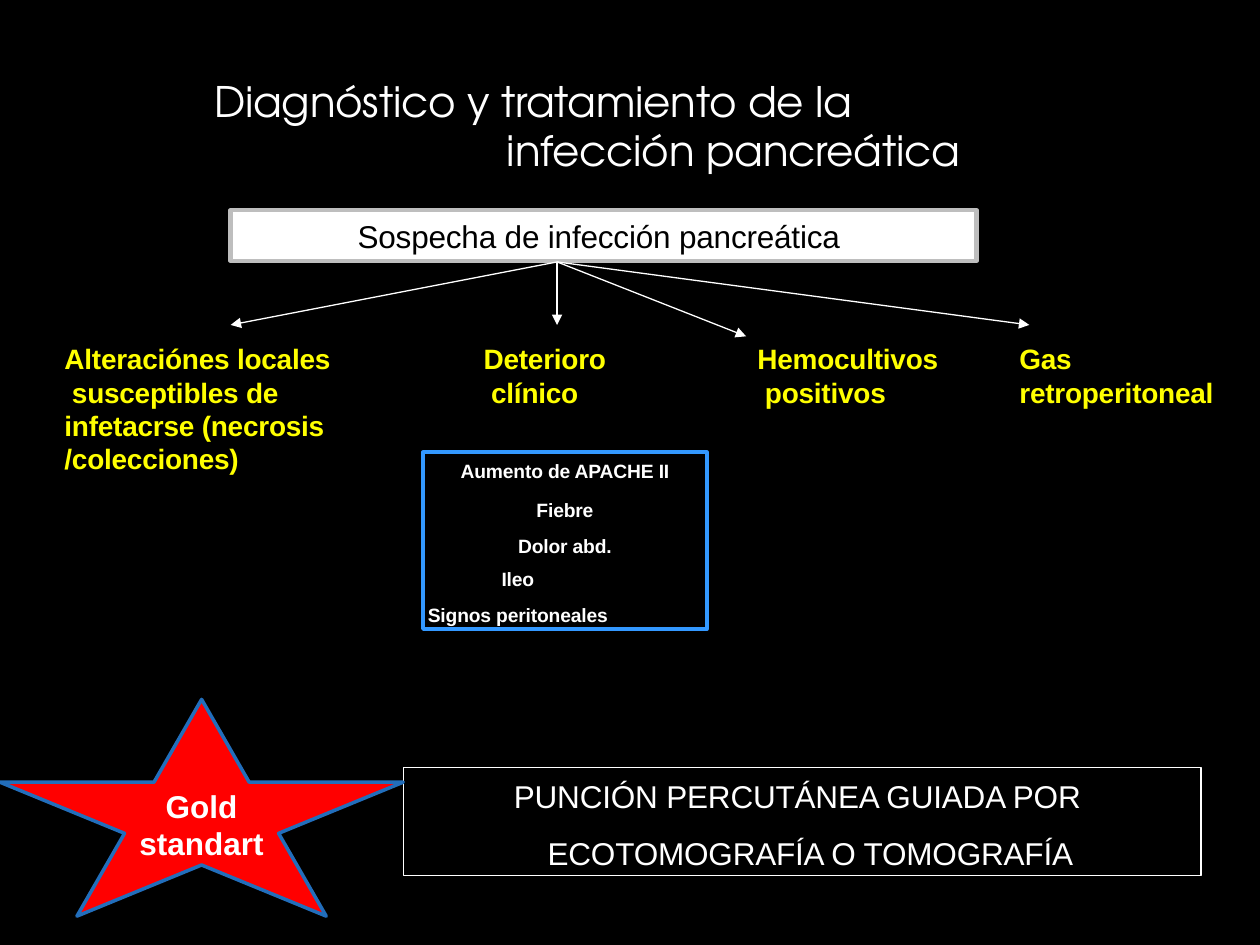
from lxml import etree
from pptx import Presentation
from pptx.dml.color import RGBColor
from pptx.enum.shapes import MSO_CONNECTOR, MSO_SHAPE
from pptx.enum.text import MSO_ANCHOR, PP_ALIGN
from pptx.oxml.ns import qn
from pptx.util import Cm, Pt

LEFT, CENTER = PP_ALIGN.LEFT, PP_ALIGN.CENTER
TOP, MIDDLE = MSO_ANCHOR.TOP, MSO_ANCHOR.MIDDLE
RECT, STAR = MSO_SHAPE.RECTANGLE, MSO_SHAPE.STAR_5_POINT

BLACK = RGBColor(0x00, 0x00, 0x00)
WHITE = RGBColor(0xFF, 0xFF, 0xFF)
GREY = RGBColor(0xBE, 0xBE, 0xBE)
YELLOW = RGBColor(0xFF, 0xFF, 0x00)
RED = RGBColor(0xFF, 0x00, 0x00)
SKY = RGBColor(0x33, 0x98, 0xFF)
BLUE = RGBColor(0x22, 0x6E, 0xBB)

TITLE = "Diagnóstico y tratamiento de la\vinfección pancreática"
SUSPICION = "Sospecha de infección pancreática"
PUNCTURE = "PUNCIÓN PERCUTÁNEA GUIADA POR\vECOTOMOGRAFÍA O TOMOGRAFÍA"
GOLD = "Gold\vstandart"

CRITERIA_TOP = 6.86
CRITERIA = [
    (1.3, 5.51, 2.77, "Alteraciónes locales\v susceptibles de\v"
                      "infetacrse (necrosis\v/colecciones)"),
    (9.75, 2.57, 1.42, "Deterioro\v clínico"),
    (15.27, 3.76, 1.42, "Hemocultivos\v positivos"),
    (20.55, 4.04, 1.42, "Gas\vretroperitoneal"),
]
SIGNS = [
    ("Aumento de APACHE II", 0, 0),
    ("Fiebre", 9.1, 0),
    ("Dolor abd.", 7.4, 0),
    ("Ileo", 5.6, 1.9),
    ("Signos peritoneales", 7.4, 1.9),
]
ARROW_START = (11.23, 5.28)
ARROW_ENDS = [(4.65, 6.55), (11.23, 6.55), (15.04, 6.78), (20.75, 6.55)]


def write(sp, lines, size, color, bold=False, font="Arial", align=LEFT,
          anchor=TOP, inset=0.03, spacing=None, hang=None, track=-10):
    tf = sp.text_frame
    tf.word_wrap = False
    tf.vertical_anchor = anchor
    tf.margin_left = tf.margin_right = tf.margin_bottom = 0
    tf.margin_top = Cm(inset)
    for i, (text, before, right) in enumerate(lines):
        p = tf.paragraphs[0] if i == 0 else tf.add_paragraph()
        p.text = text
        p.alignment = align
        p.space_before = Pt(before)
        if spacing:
            p.line_spacing = Pt(spacing)
        pPr = p._p.get_or_add_pPr()
        if right:
            pPr.set("marR", str(Cm(right)))
        if hang:
            pPr.set("marL", str(Cm(hang)))
            pPr.set("indent", str(-Cm(hang)))
        for r in p.runs:
            r.font.name = font
            r.font.size = Pt(size)
            r.font.bold = bold
            r.font.color.rgb = color
            r._r.get_or_add_rPr().set("spc", str(track))


def add_text(s, box, text, size, color, **style):
    sp = s.shapes.add_textbox(*map(Cm, box))
    write(sp, [(text, 0, 0)], size, color, **style)


def add_box(s, kind, box, line, width, fill=None):
    sp = s.shapes.add_shape(kind, *map(Cm, box))
    sp.shadow.inherit = False
    if fill is None:
        sp.fill.background()
    else:
        sp.fill.solid()
        sp.fill.fore_color.rgb = fill
    sp.line.color.rgb = line
    sp.line.width = Pt(width)
    return sp


def add_arrow(s, start, end):
    cx = s.shapes.add_connector(MSO_CONNECTOR.STRAIGHT, *map(Cm, start + end))
    cx.line.color.rgb = WHITE
    cx.line.width = Pt(0.75)
    etree.SubElement(cx.line._get_or_add_ln(), qn("a:tailEnd"), type="triangle")
    etree.SubElement(cx._element.spPr, qn("a:effectLst"))


def main():
    prs = Presentation()
    prs.slide_width, prs.slide_height = Cm(25.4), Cm(19.05)
    s = prs.slides.add_slide(prs.slide_layouts[6])
    s.background.fill.solid()
    s.background.fill.fore_color.rgb = BLACK

    add_text(s, (4.32, 1.47, 16.79, 2.06), TITLE, 24, WHITE,
             font="TeX Gyre Adventor", inset=0.1, spacing=27.7, hang=5.9)

    sp = add_box(s, RECT, (4.65, 4.24, 15.04, 1.02), GREY, 2.5, WHITE)
    write(sp, [(SUSPICION, 0, 0.2)], 18, BLACK, align=CENTER, inset=0.14)

    for end in ARROW_ENDS:
        add_arrow(s, ARROW_START, end)

    for left, width, height, text in CRITERIA:
        add_text(s, (left, CRITERIA_TOP, width, height), text, 16, YELLOW,
                 bold=True, spacing=19.1)

    sp = add_box(s, RECT, (8.53, 9.12, 5.72, 3.56), SKY, 2.25)
    write(sp, SIGNS, 11, WHITE, bold=True, align=CENTER, inset=0.14)
    sp.text_frame.word_wrap = True

    add_box(s, RECT, (8.13, 15.47, 16.08, 2.18), WHITE, 0.75)
    add_text(s, (10.36, 15.24, 11.68, 2.39), PUNCTURE, 18, WHITE,
             spacing=32.6, hang=0.68)

    sp = add_box(s, STAR, (0, 14.1, 8.13, 4.37), BLUE, 2, RED)
    write(sp, [(GOLD, 0, 0)], 18, WHITE, bold=True, align=CENTER,
          anchor=MIDDLE, track=0)

    prs.save("out.pptx")


if __name__ == "__main__":
    main()
